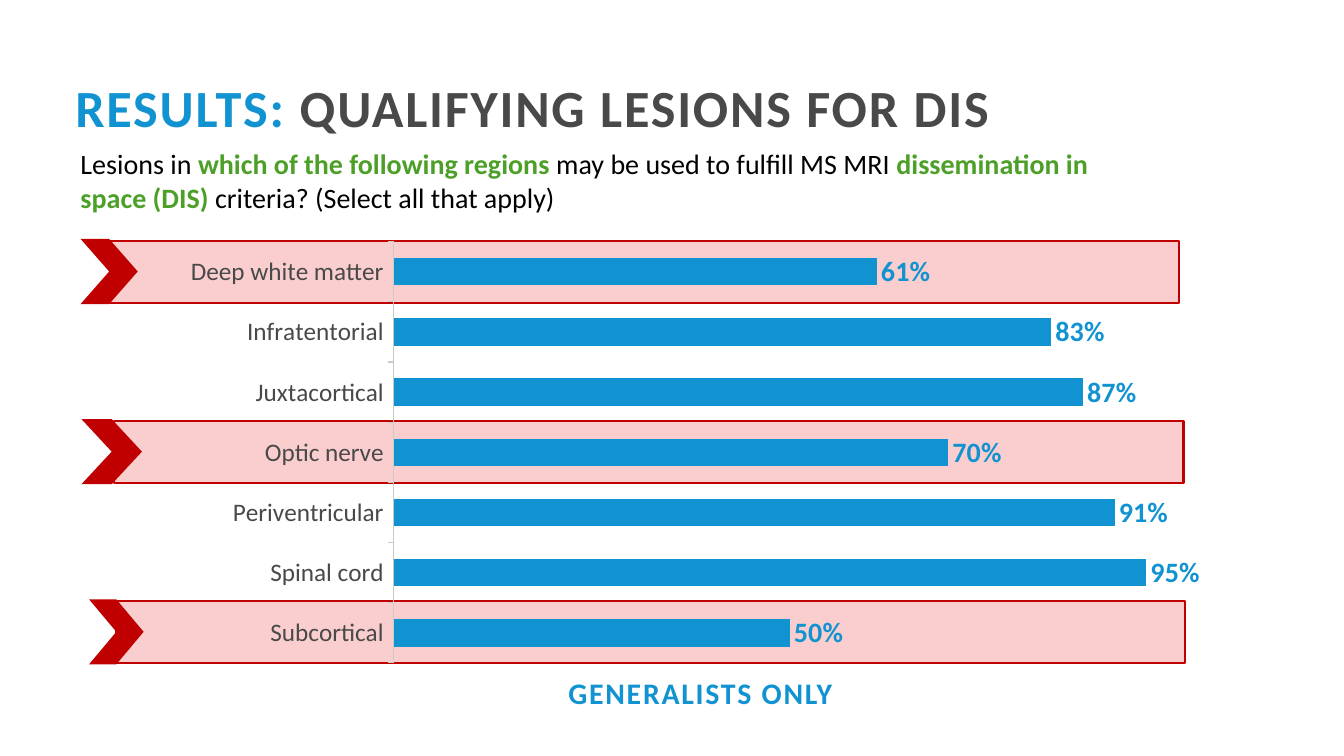
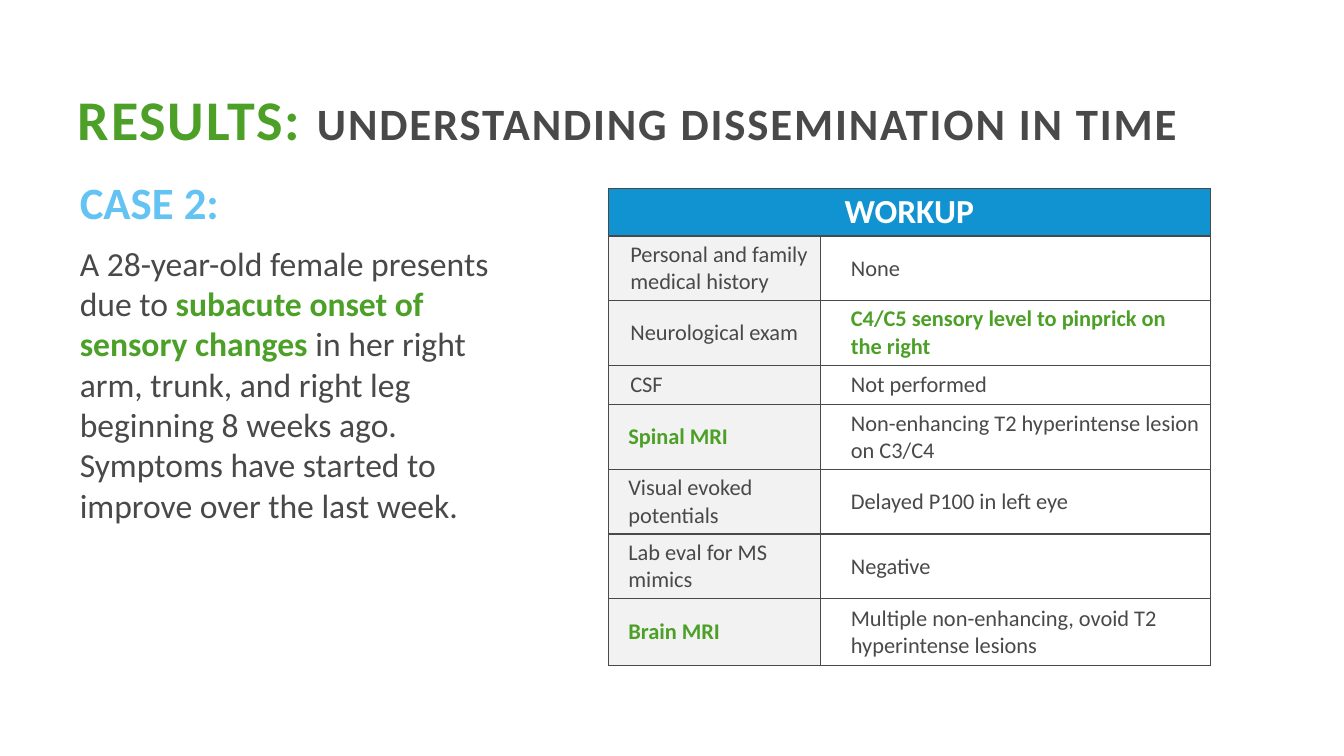
from lxml import etree
from pptx import Presentation
from pptx import util as u
from pptx.chart.data import CategoryChartData
from pptx.dml.color import RGBColor
from pptx.enum import chart as charts, shapes, text
from pptx.oxml import parse_xml
from pptx.oxml.ns import nsdecls, qn

COLORS = {
    "blue": "1293D1", "sky": "63C3F2", "green": "4CA027", "gray": "494949",
    "black": "000000", "white": "FFFFFF", "pale": "F2F2F2", "axis": "C8CDC3",
    "red": "C00000", "wash": "E90C0E",
}
FONT = "Calibri"
COLUMNS, ROWS = 160, 90
WIDTH, HEIGHT = u.Inches(13.33), u.Inches(7.5)


def color(name):
    return RGBColor.from_string(COLORS[name])


def columns(count):
    return u.Emu(round(WIDTH * count / COLUMNS))


def rows(count):
    return u.Emu(round(HEIGHT * count / ROWS))


def area(left, top, width, height):
    """Turn a place on the grid into slide lengths."""
    return columns(left), rows(top), columns(width), rows(height)


def set_font(font, size, ink="gray", bold=False):
    font.name, font.size, font.bold = FONT, u.Pt(size), bold
    font.color.rgb = color(ink)


def write(para, content, size, ink="gray", bold=False, spacing=0, align=text.PP_ALIGN.LEFT,
          indent=0, before=0, after=0, line=1.0):
    """Fill a paragraph; content is a string or (string, overrides) pairs."""
    para.alignment, para.line_spacing = align, line
    para.space_before, para.space_after = u.Pt(before), u.Pt(after)
    properties = para._p.get_or_add_pPr()
    properties.set("marL", str(u.Inches(indent)))
    properties.set("indent", "0")
    etree.SubElement(properties, qn("a:buNone"))
    for words, changes in [(content, {})] if isinstance(content, str) else content:
        span = para.add_run()
        span.text = words
        set_font(span.font, **{"size": size, "ink": ink, "bold": bold, **changes})
        if spacing:
            span.font._element.set("spc", str(round(spacing * 100)))


def set_border(cell, ink, width):
    properties = cell._tc.get_or_add_tcPr()
    for side in ("lnL", "lnR", "lnT", "lnB"):
        properties.append(parse_xml(
            f'<a:{side} {nsdecls("a")} w="{u.Pt(width)}"><a:solidFill>'
            f'<a:srgbClr val="{COLORS[ink]}"/></a:solidFill></a:{side}>'))


class Deck:
    KEY = {"ink": "green", "bold": True}

    def __init__(self):
        self.deck = Presentation()
        self.deck.slide_width, self.deck.slide_height = WIDTH, HEIGHT
        self.page = None

    def add_page(self, layout, title, place):
        self.page = self.deck.slides.add_slide(self.deck.slide_layouts[layout])
        box = self.page.shapes.title
        self.place(box, place)
        frame = box.text_frame
        frame.vertical_anchor = text.MSO_ANCHOR.BOTTOM
        frame.margin_left = frame.margin_right = u.Inches(0.08)
        frame.margin_top = frame.margin_bottom = u.Inches(0.04)
        write(frame.paragraphs[0], title, size=32, bold=True, spacing=1.3, line=0.9)

    def place(self, box, place):
        box.left, box.top, box.width, box.height = area(*place)
        box.text_frame.word_wrap = True
        box.text_frame.auto_size = text.MSO_AUTO_SIZE.NONE

    def add_body(self, place, paragraphs):
        box = self.page.placeholders[1]
        self.place(box, place)
        frame = box.text_frame
        for index, (content, style) in enumerate(paragraphs):
            para = frame.add_paragraph() if index else frame.paragraphs[0]
            write(para, content, **style)

    def add_text(self, place, content, wrap=True, **style):
        box = self.page.shapes.add_textbox(*area(*place))
        box.text_frame.word_wrap = wrap
        write(box.text_frame.paragraphs[0], content, **style)

    def add_shape(self, parent, kind, place, fill, line=None, opacity=100):
        shape = parent.shapes.add_shape(kind, *area(*place))
        shape.shadow.inherit = False
        shape.fill.solid()
        shape.fill.fore_color.rgb = color(fill)
        if opacity < 100:
            tone = shape.fill._xPr.find(".//" + qn("a:srgbClr"))
            etree.SubElement(tone, qn("a:alpha")).set("val", str(opacity * 1000))
        if line:
            shape.line.color.rgb = color(line)
            shape.line.width = u.Pt(1.5)
        else:
            shape.line.fill.background()

    def add_highlight(self, top, band_left, marker_left, marker_width):
        """Tinted band with a chevron at its left end."""
        group = self.page.shapes.add_group_shape()
        self.add_shape(group, shapes.MSO_SHAPE.RECTANGLE, (band_left, top, 127.3, 7.4),
                       "wash", line="red", opacity=20)
        self.add_shape(group, shapes.MSO_SHAPE.CHEVRON,
                       (marker_left, top - 0.2, marker_width, 7.75), "red")

    def add_bars(self, place, shares, plot):
        data = CategoryChartData(number_format="0%")
        data.categories = list(shares)
        data.add_series("Series 1", list(shares.values()))
        chart = self.page.shapes.add_chart(
            charts.XL_CHART_TYPE.BAR_CLUSTERED, *area(*place), data).chart
        chart.has_legend = chart.has_title = False
        set_font(chart.font, 10)

        names = chart.category_axis
        names.reverse_order = True
        names.has_major_gridlines = False
        names.major_tick_mark = charts.XL_TICK_MARK.OUTSIDE
        names.format.line.color.rgb = color("axis")
        names.format.line.width = u.Pt(0.75)
        set_font(names.tick_labels.font, 18)

        scale = chart.value_axis
        scale.minimum_scale, scale.maximum_scale = 0, 1
        scale.has_major_gridlines = False
        scale.major_tick_mark = charts.XL_TICK_MARK.NONE
        scale.tick_label_position = charts.XL_TICK_LABEL_POSITION.NONE
        scale.format.line.fill.background()

        bars = chart.plots[0]
        bars.gap_width, bars.overlap, bars.vary_by_categories = 120, -20, False
        bars.series[0].format.fill.solid()
        bars.series[0].format.fill.fore_color.rgb = color("blue")
        bars.has_data_labels = True
        labels = bars.data_labels
        labels.show_value = True
        labels.number_format, labels.number_format_is_linked = "0%", False
        labels.position = charts.XL_LABEL_POSITION.OUTSIDE_END
        set_font(labels.font, 20, "blue", True)
        self.set_plot(chart, plot)

    def set_plot(self, chart, plot):
        """Fix the inner plot area, as shares of the chart."""
        settings = [("layoutTarget", "inner"), ("xMode", "edge"), ("yMode", "edge"),
                    *zip("xywh", plot)]
        marks = "".join(f'<c:{name} val="{value}"/>' for name, value in settings)
        plot_area = chart._chartSpace.find(".//" + qn("c:plotArea"))
        for old in plot_area.findall(qn("c:layout")):
            plot_area.remove(old)
        plot_area.insert(0, parse_xml(
            f'<c:layout {nsdecls("c")}><c:manualLayout>{marks}</c:manualLayout></c:layout>'))

    def add_table(self, place, widths, heights, heading, lines):
        table = self.page.shapes.add_table(
            len(heights), len(widths), *area(*place)).table
        table.first_row = table.horz_banding = False
        for column, width in zip(table.columns, widths):
            column.width = columns(width)
        for row, height in zip(table.rows, heights):
            row.height = rows(height)
        table.cell(0, 0).merge(table.cell(0, len(widths) - 1))
        self.fill_cell(table.cell(0, 0), heading, "blue", size=24, ink="white",
                       bold=True, align=text.PP_ALIGN.CENTER)
        set_border(table.cell(0, 1), "gray", 1)
        for index, (label, finding, indent, label_style, finding_style) in enumerate(lines, 1):
            self.fill_cell(table.cell(index, 0), label, "pale", size=16,
                           indent=indent, **label_style)
            self.fill_cell(table.cell(index, 1), finding, "white", size=16,
                           indent=0.2, **finding_style)

    def fill_cell(self, cell, content, fill, **style):
        set_border(cell, "gray", 1)
        cell.fill.solid()
        cell.fill.fore_color.rgb = color(fill)
        cell.vertical_anchor = text.MSO_ANCHOR.MIDDLE
        cell.margin_left = cell.margin_right = u.Inches(0.1)
        cell.margin_top = cell.margin_bottom = 0
        write(cell.text_frame.paragraphs[0], content, **style)


def add_lesions(deck):
    deck.add_page(5, [("RESULTS: ", {"size": 37.3, "ink": "blue"}),
                      ("QUALIFYING LESIONS FOR DIS", {"size": 37.3})], (8, 3.1, 144, 13.9))
    first_top, step = 28.65, 7.15
    for index, *lefts in [(3, 13.6, 9.7, 7.2), (6, 13.8, 10.6, 6.5), (0, 13.1, 9.6, 6.8)]:
        deck.add_highlight(first_top + index * step, *lefts)
    deck.add_bars((18.8, 27.2, 125.3, 58.2), {
        "Deep white matter": 0.61, "Infratentorial": 0.83, "Juxtacortical": 0.87,
        "Optic nerve": 0.7, "Periventricular": 0.91, "Spinal cord": 0.95,
        "Subcortical": 0.5}, plot=(0.224, 0.027, 0.753, 0.862))
    deck.add_text((8.4, 16.9, 128.8, 9.2), [
        ("Lesions in ", {}), ("which of the following regions ", deck.KEY),
        ("may be used to fulfill MS MRI ", {}),
        ("dissemination in space (DIS) ", deck.KEY),
        ("criteria? (Select all that apply)", {})], size=20, ink="black")
    deck.add_text((66.1, 79.7, 34.6, 5.5), "GENERALISTS ONLY", wrap=False, size=21.3,
                  ink="blue", bold=True, spacing=1.3, align=text.PP_ALIGN.CENTER)


def add_case(deck):
    deck.add_page(1, [("RESULTS: ", {"size": 40, "ink": "green"}),
                      ("UNDERSTANDING DISSEMINATION IN TIME", {})], (8.3, 4.8, 136.8, 13.9))
    deck.add_body((8.3, 20.2, 56.5, 61.8), [
        ("CASE 2:", {"size": 32, "ink": "sky", "bold": True, "before": 6.4, "after": 5.3}),
        ([("A 28-year-old female presents due to ", {}),
          ("subacute onset of sensory changes ", deck.KEY),
          ("in her right arm, trunk, and right leg beginning 8 weeks ago. "
           "Symptoms have started to improve over the last week.", {})],
         {"size": 24, "before": 4.8, "after": 5.3})])
    deck.add_table((72.4, 22.4, 71.7, 57), (25.3, 46.4),
                   (5.7, 7.7, 7.7, 4.7, 7.7, 7.7, 7.7, 8), "WORKUP", [
        ("Personal and family medical history", "None", 0.12, {}, {}),
        ("Neurological exam", "C4/C5 sensory level to pinprick on the right", 0.12, {}, deck.KEY),
        ("CSF", "Not performed", 0.12, {}, {}),
        ("Spinal MRI", "Non-enhancing T2 hyperintense lesion on C3/C4", 0.1, deck.KEY, {}),
        ("Visual evoked potentials", "Delayed P100 in left eye", 0.1, {}, {}),
        ("Lab eval for MS mimics", "Negative", 0.1, {}, {}),
        ("Brain MRI", "Multiple non-enhancing, ovoid T2 hyperintense lesions",
         0.1, deck.KEY, {})])


def main():
    deck = Deck()
    add_lesions(deck)
    add_case(deck)
    deck.deck.save("out.pptx")


if __name__ == "__main__":
    main()
